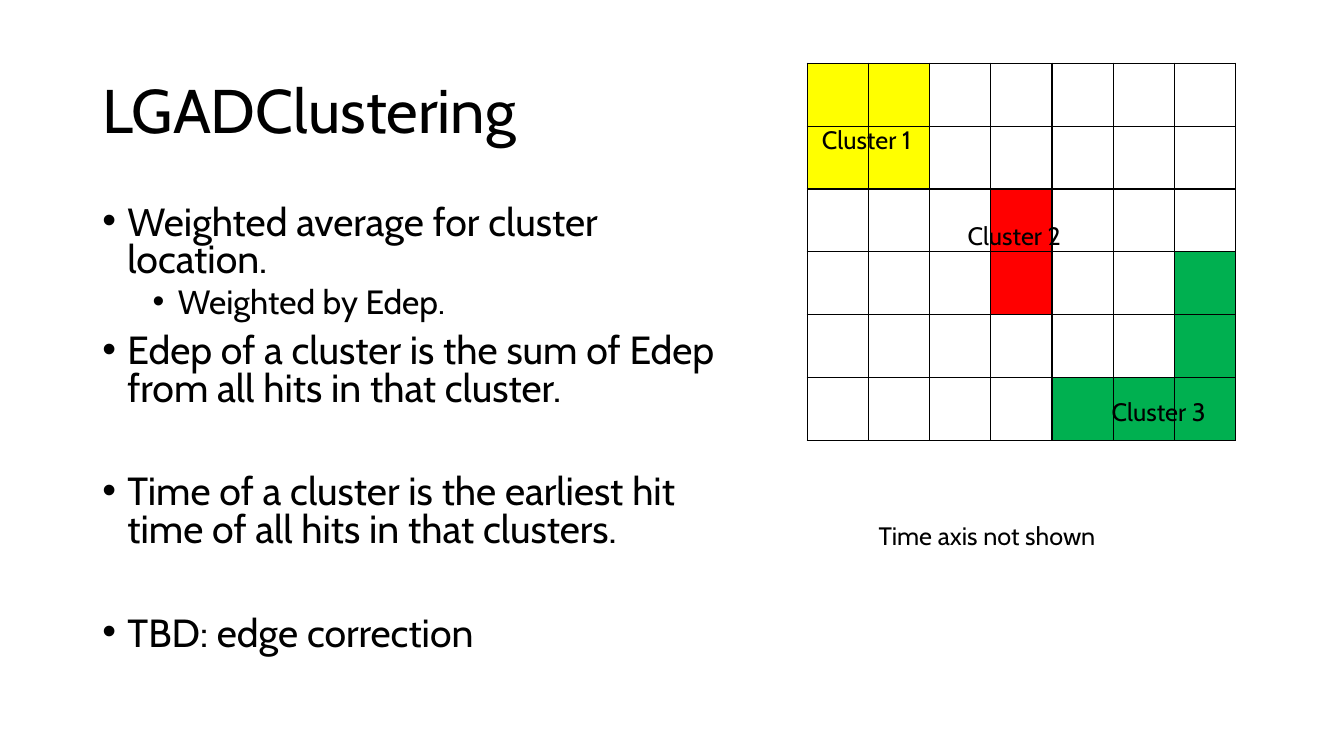
from lxml import etree
from pptx import Presentation
from pptx.dml.color import RGBColor
from pptx.enum.text import MSO_ANCHOR
from pptx.oxml.ns import qn
from pptx.util import Pt

TOP, MIDDLE = MSO_ANCHOR.TOP, MSO_ANCHOR.MIDDLE
FONT = "Cabin"
COLORS = {
    "text": "000000",
    "grid": "000000",
    "cluster 1": "FFFF00",
    "cluster 2": "FF0000",
    "cluster 3": "00B050",
}


class SlideBuilder:
    """Holds the style and the current slide."""

    def __init__(self, slide, font, colors):
        self.slide = slide
        self.font = font
        self.colors = colors

    def color(self, name):
        return RGBColor.from_string(self.colors[name])

    def text_frame(self, left, top, width, height, anchor=TOP):
        shape = self.slide.shapes.add_textbox(Pt(left), Pt(top), Pt(width), Pt(height))
        shape.text_frame.word_wrap = True
        shape.text_frame.vertical_anchor = anchor
        return shape.text_frame

    def run(self, paragraph, text, size):
        run = paragraph.add_run()
        run.text = text
        run.font.name = self.font
        run.font.size = Pt(size)
        run.font.color.rgb = self.color("text")

    def label(self, text, left, top, width, height, size=18, anchor=TOP, line_spacing=1.0):
        paragraph = self.text_frame(left, top, width, height, anchor).paragraphs[0]
        paragraph.line_spacing = line_spacing
        self.run(paragraph, text, size)

    def bullets(self, items, left, top, width, height):
        frame = self.text_frame(left, top, width, height)
        for index, (text, level, size, space_before) in enumerate(items):
            paragraph = frame.add_paragraph() if index else frame.paragraphs[0]
            paragraph.level = level
            properties = paragraph._p.get_or_add_pPr()
            properties.set("marL", str(Pt(18 + 36 * level)))
            properties.set("indent", str(Pt(-18)))
            etree.SubElement(properties, qn("a:buFont"), typeface="Arial")
            etree.SubElement(properties, qn("a:buChar"), char="•")
            paragraph.line_spacing = 0.8
            paragraph.space_before = Pt(space_before)
            self.run(paragraph, text, size)

    def border(self, cell, width=1):
        properties = cell._tc.get_or_add_tcPr()
        for side in ("a:lnL", "a:lnR", "a:lnT", "a:lnB"):
            line = etree.SubElement(properties, qn(side), w=str(Pt(width)))
            fill = etree.SubElement(line, qn("a:solidFill"))
            etree.SubElement(fill, qn("a:srgbClr"), val=self.colors["grid"])

    def grid(self, rows, columns, fills, left, top, width, height):
        table = self.slide.shapes.add_table(
            rows, columns, Pt(left), Pt(top), Pt(width), Pt(height)).table
        table.first_row = table.horz_banding = False
        for column in table.columns:
            column.width = Pt(width / columns)
        for row in table.rows:
            row.height = Pt(height / rows)
        for row in range(rows):
            for column in range(columns):
                cell = table.cell(row, column)
                self.border(cell)
                if (row, column) in fills:
                    cell.fill.solid()
                    cell.fill.fore_color.rgb = self.color(fills[row, column])
                else:
                    cell.fill.background()


def main():
    presentation = Presentation()
    presentation.slide_width, presentation.slide_height = Pt(960), Pt(540)
    slide = presentation.slides.add_slide(presentation.slide_layouts[6])
    builder = SlideBuilder(slide, FONT, COLORS)

    # Title
    builder.label("LGADClustering", 66, 28.75, 828, 104.4, 44, MIDDLE, 0.9)

    # Bullets: text, level, size, space before
    builder.bullets([
        ("Weighted average for cluster location.", 0, 28, 0),
        ("Weighted by Edep.", 1, 24, 5),
        ("Edep of a cluster is the sum of Edep from all hits in that cluster.", 0, 28, 10),
        ("Time of a cluster is the earliest hit time of all hits in that clusters.", 0, 28, 47),
        ("TBD: edge correction", 0, 28, 47),
    ], 66, 143.75, 457, 342.6)

    # Sensor grid: the (row, column) cells hit by each cluster
    clusters = {
        "cluster 1": [(0, 0), (0, 1), (1, 0), (1, 1)],
        "cluster 2": [(2, 3), (3, 3)],
        "cluster 3": [(3, 6), (4, 6), (5, 4), (5, 5), (5, 6)],
    }
    fills = {cell: name for name, cells in clusters.items() for cell in cells}
    builder.grid(6, 7, fills, 576.6, 45.2, 306, 269.3)

    # Cluster labels and note
    for text, left, top in (("Cluster 1", 580, 85), ("Cluster 2", 684, 153.5),
                            ("Cluster 3", 787, 279.5)):
        builder.label(text, left, top, 115, 29)
    builder.label("Time axis not shown", 620.5, 368, 242.5, 29)

    presentation.save("out.pptx")


if __name__ == "__main__":
    main()
